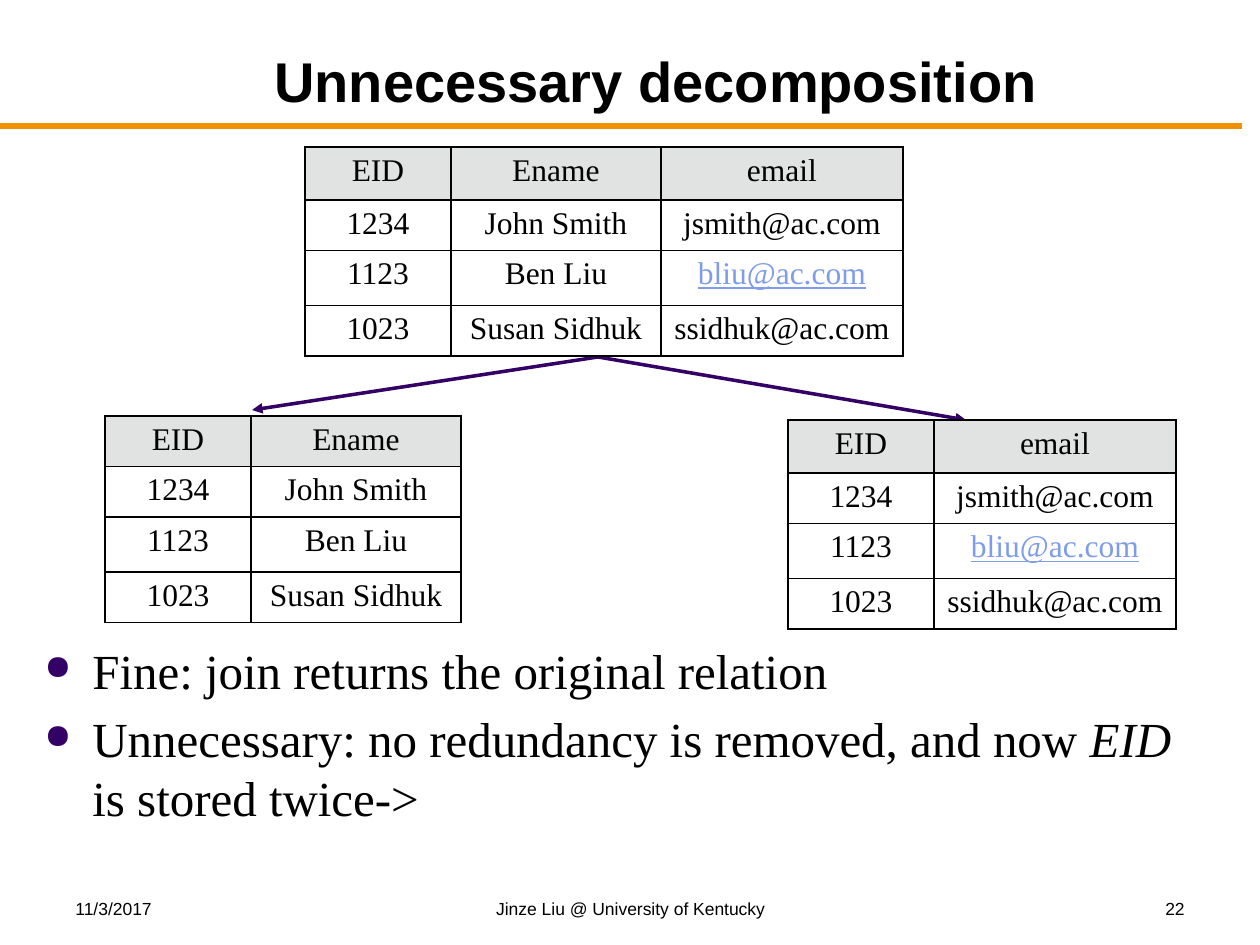
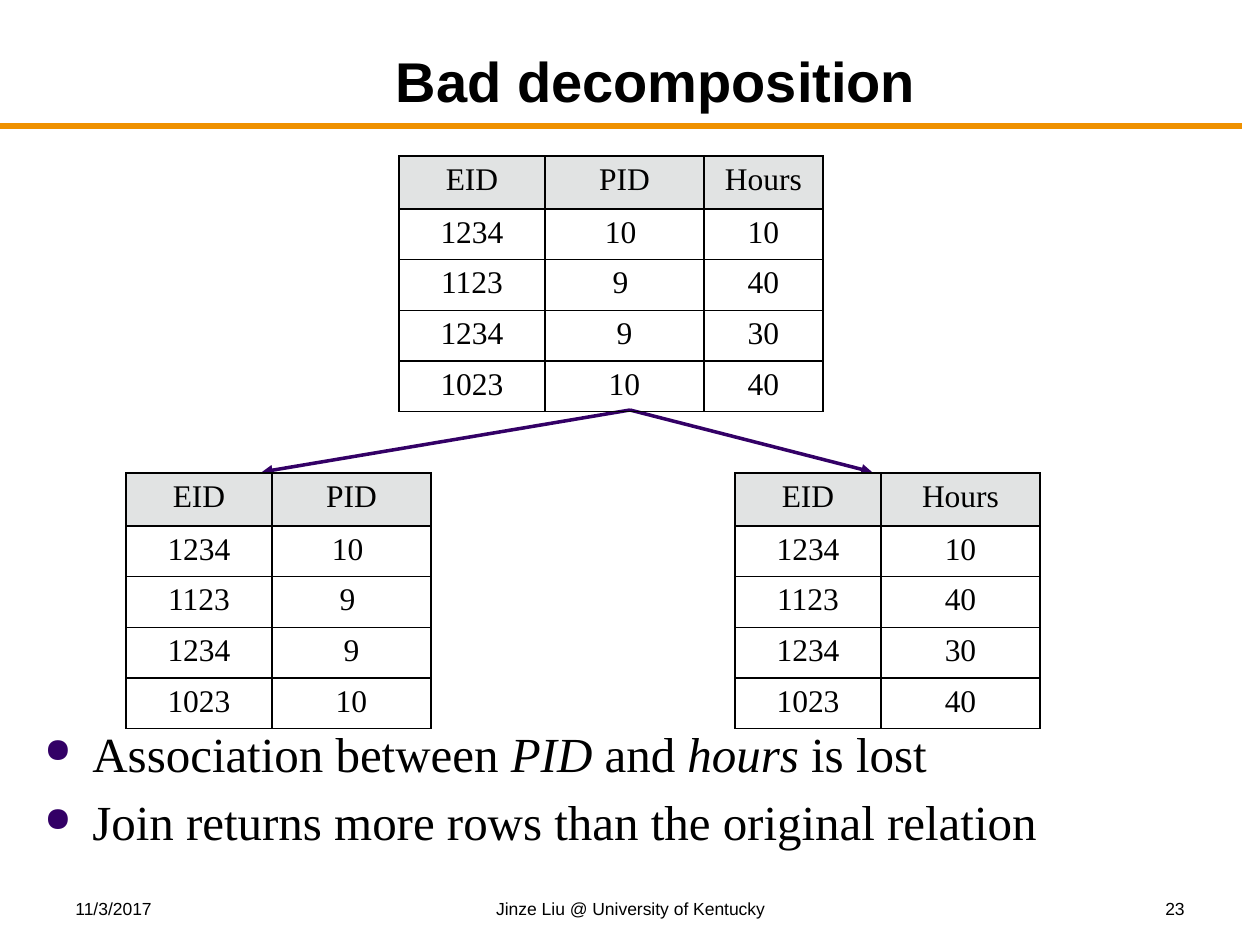
from lxml.etree import SubElement
from pptx import Presentation
from pptx.dml.color import RGBColor
from pptx.enum.shapes import MSO_CONNECTOR
from pptx.enum.text import MSO_ANCHOR, MSO_AUTO_SIZE, PP_ALIGN
from pptx.oxml.ns import qn
from pptx.util import Pt

SCALE = 914400 / 126
COLORS = {"text": "000000", "rule": "EF9100", "accent": "330066",
          "header": "E1E3E3", "link": "7E9CE8"}
TITLE = {"name": "Arial", "size": Pt(32), "bold": True}
FOOTER = {"name": "Arial", "size": Pt(10)}
BODY = {"name": "Times New Roman", "size": Pt(28)}
CELL = {"name": "Times New Roman", "size": Pt(18)}
FOOTERS = [("11/3/2017", 63, 294, PP_ALIGN.LEFT),
           ("Jinze Liu @ University of Kentucky", 431, 399, PP_ALIGN.CENTER),
           ("{page}", 903, 294, PP_ALIGN.RIGHT)]
LINKS = {"bliu@ac.com"}

SLIDES = [
    {"title": "Unnecessary decomposition", "page": 22,
     "relation": [("EID", "Ename", "email"),
                  ("1234", "John Smith", "jsmith@ac.com"),
                  ("1123", "Ben Liu", "bliu@ac.com"),
                  ("1023", "Susan Sidhuk", "ssidhuk@ac.com")],
     "tables": [{"at": (305, 147), "cols": {"EID": 146, "Ename": 210, "email": 242},
                 "rows": (53, 50, 55, 50)},
                {"at": (105, 416), "cols": {"EID": 146, "Ename": 210},
                 "rows": (50, 50, 55, 50)},
                {"at": (788, 420), "cols": {"EID": 146, "email": 242},
                 "rows": (53, 50, 55, 50)}],
     "fork": (598, 357), "tips": [(252, 410), (966, 420)],
     "body_box": (32, 634, 1187, 238),
     "body": [[("Fine: join returns the original relation", False)],
              [("Unnecessary: no redundancy is removed, and now ", False),
               ("EID", True), (" is stored twice->", False)]]},
    {"title": "Bad decomposition", "page": 23,
     "relation": [("EID", "PID", "Hours"),
                  ("1234", "10 ", "10"),
                  ("1123", "9 ", "40"),
                  ("1234", "9", "30"),
                  ("1023", "10", "40")],
     "tables": [{"at": (399, 156), "cols": {"EID": 146, "PID": 159, "Hours": 119},
                 "rows": (53, 50, 51, 50, 50)},
                {"at": (126, 473), "cols": {"EID": 146, "PID": 159},
                 "rows": (53, 50, 51, 50, 50)},
                {"at": (735, 473), "cols": {"EID": 146, "Hours": 159},
                 "rows": (53, 50, 51, 50, 50)}],
     "fork": (630, 410), "tips": [(262, 472), (872, 472)],
     "body_box": (32, 717, 1187, 228),
     "body": [[("Association between ", False), ("PID", True), (" and ", False),
               ("hours", True), (" is lost", False)],
              [("Join returns more rows than the original relation", False)]]},
]


def px(*values):
    return [round(v * SCALE) for v in values]


def rgb(name):
    return RGBColor.from_string(COLORS[name])


def add_run(p, text, style, color="text", **extra):
    r = p.add_run()
    r.text = text
    for key, value in {**style, **extra}.items():
        setattr(r.font, key, value)
    r.font.color.rgb = rgb(color)


def space_before(p):
    before = SubElement(p._p.get_or_add_pPr(), qn("a:spcBef"))
    SubElement(before, qn("a:spcPct"), val="20000")


def add_bullet(p):
    pPr = p._p.get_or_add_pPr()
    indent = px(48)[0]
    pPr.set("marL", str(indent))
    pPr.set("indent", str(-indent))
    color = SubElement(pPr, qn("a:buClr"))
    SubElement(color, qn("a:srgbClr"), val=COLORS["accent"])
    SubElement(pPr, qn("a:buSzPct"), val="70000")
    SubElement(pPr, qn("a:buChar"), char="●")


def add_text_box(s, box):
    tf = s.shapes.add_textbox(*px(*box)).text_frame
    tf.word_wrap = True
    return tf


def add_line(s, start, end, color, width, arrow=False):
    line = s.shapes.add_connector(MSO_CONNECTOR.STRAIGHT, *px(*start, *end))
    line.line.color.rgb = rgb(color)
    line.line.width = Pt(width)
    if arrow:
        SubElement(line.line._get_or_add_ln(), qn("a:tailEnd"), type="triangle")
    SubElement(line._element.spPr, qn("a:effectLst"))


def set_borders(cell):
    tcPr = cell._tc.get_or_add_tcPr()
    for i, side in enumerate(("lnL", "lnR", "lnT", "lnB")):
        ln = tcPr.makeelement(qn(f"a:{side}"), {"w": str(Pt(1))})
        fill = SubElement(ln, qn("a:solidFill"))
        SubElement(fill, qn("a:srgbClr"), val=COLORS["text"])
        tcPr.insert(i, ln)


def add_relation(s, relation, at, cols, rows):
    size = sum(cols.values()), sum(rows)
    table = s.shapes.add_table(len(rows), len(cols), *px(*at, *size)).table
    table.first_row = table.horz_banding = False
    for row, height in zip(table.rows, px(*rows)):
        row.height = height
    for c, (name, width) in enumerate(cols.items()):
        table.columns[c].width = px(width)[0]
        source = relation[0].index(name)
        for r, record in enumerate(relation):
            cell, text = table.cell(r, c), record[source]
            if r == 0:
                cell.fill.solid()
                cell.fill.fore_color.rgb = rgb("header")
            else:
                cell.fill.background()
            set_borders(cell)
            p = cell.text_frame.paragraphs[0]
            p.alignment = PP_ALIGN.CENTER
            space_before(p)
            linked = text in LINKS
            add_run(p, text, CELL, "link" if linked else "text", underline=linked)


def add_frame(s, title, page):
    add_line(s, (0, 126), (1242, 126), "rule", 3)
    for text, left, width, align in FOOTERS:
        p = add_text_box(s, (left, 892, width, 32)).paragraphs[0]
        p.alignment = align
        add_run(p, text.format(page=page), FOOTER)
    sp = s.shapes.title
    sp.left, sp.top, sp.width, sp.height = px(136, 32, 1040, 88)
    tf = sp.text_frame
    tf.auto_size = MSO_AUTO_SIZE.NONE
    tf.vertical_anchor = MSO_ANCHOR.BOTTOM
    p = tf.paragraphs[0]
    p.alignment = PP_ALIGN.CENTER
    add_run(p, title, TITLE)


def add_body(s, box, points):
    tf = add_text_box(s, box)
    for i, point in enumerate(points):
        p = tf.add_paragraph() if i else tf.paragraphs[0]
        space_before(p)
        add_bullet(p)
        for text, italic in point:
            add_run(p, text, BODY, italic=italic)


def main():
    prs = Presentation()
    prs.slide_width, prs.slide_height = px(1260, 945)
    for data in SLIDES:
        s = prs.slides.add_slide(prs.slide_layouts[5])
        add_frame(s, data["title"], data["page"])
        for tip in data["tips"]:
            add_line(s, data["fork"], tip, "accent", 2, arrow=True)
        add_body(s, data["body_box"], data["body"])
        for table in data["tables"]:
            add_relation(s, data["relation"], **table)
    prs.save("out.pptx")


if __name__ == "__main__":
    main()
